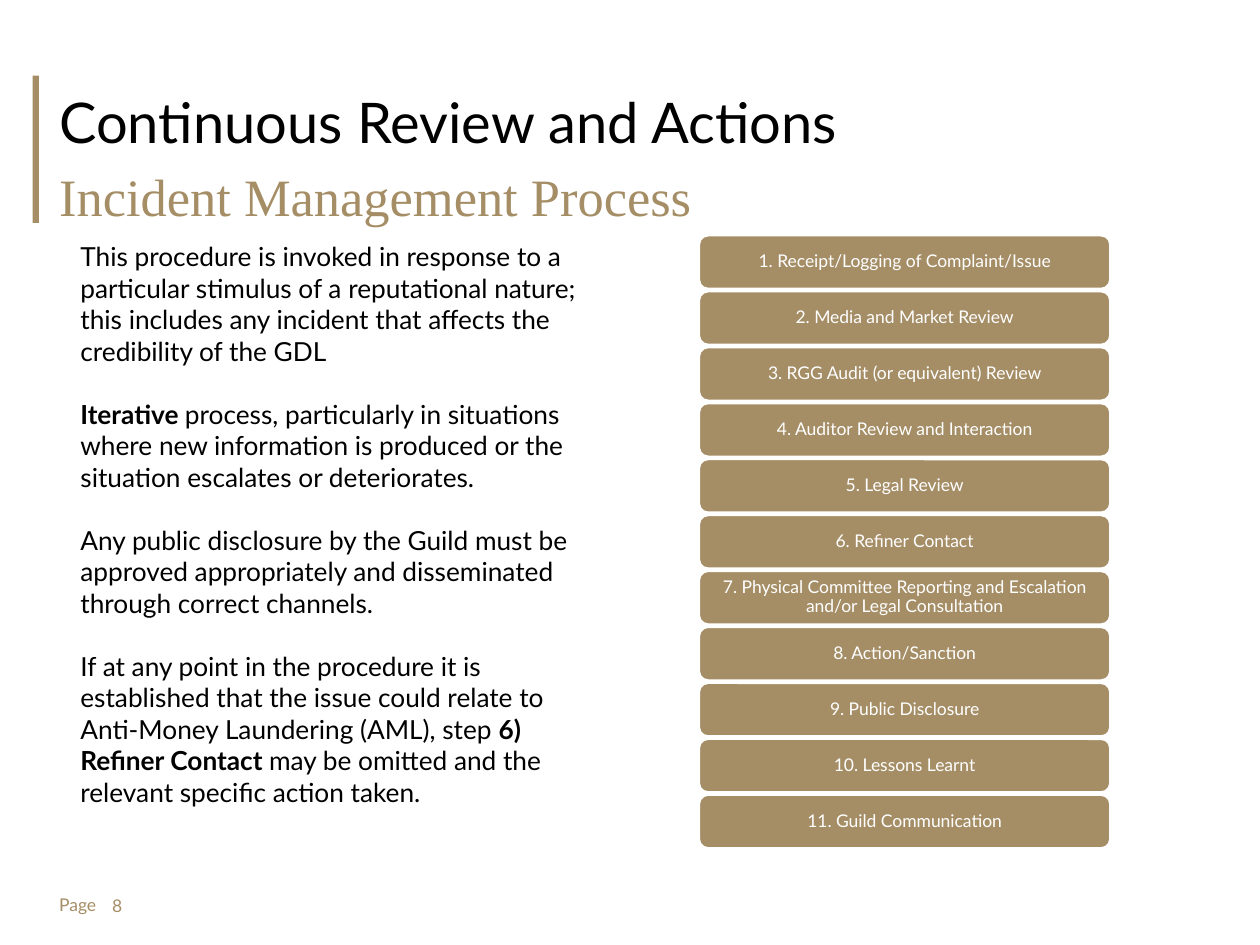
from typing import NamedTuple

from pptx import Presentation
from pptx.dml.color import RGBColor
from pptx.enum.shapes import MSO_SHAPE
from pptx.enum.text import MSO_ANCHOR, MSO_AUTO_SIZE, PP_ALIGN
from pptx.util import Inches, Pt

GOLD = RGBColor(0xA5, 0x8E, 0x66)
WHITE = RGBColor(0xFF, 0xFF, 0xFF)
BLACK = RGBColor(0, 0, 0)
RECT, ROUND = MSO_SHAPE.RECTANGLE, MSO_SHAPE.ROUNDED_RECTANGLE
TOP, MIDDLE = MSO_ANCHOR.TOP, MSO_ANCHOR.MIDDLE
LEFT, CENTER = PP_ALIGN.LEFT, PP_ALIGN.CENTER
FIXED = MSO_AUTO_SIZE.NONE


class Box(NamedTuple):
    left: float
    top: float
    width: float
    height: float

    def lengths(self):
        return [Inches(side) for side in self]


class Run(NamedTuple):
    text: str
    bold: bool = False


STEPS = [
    "Receipt/Logging of Complaint/Issue",
    "Media and Market Review",
    "RGG Audit (or equivalent) Review",
    "Auditor Review and Interaction",
    "Legal Review",
    "Refiner Contact",
    "Physical Committee Reporting and Escalation and/or Legal Consultation",
    "Action/Sanction",
    "Public Disclosure",
    "Lessons Learnt",
    "Guild Communication",
]
FIRST = Box(5.55, 1.87, 3.26, 0.42)
PITCH = 0.444

NOTES = [
    [Run("This procedure is invoked in response to a particular stimulus of a "
         "reputational nature; this includes any incident that affects the "
         "credibility of the GDL")],
    [Run("Iterative ", True),
     Run("process, particularly in situations where new information is "
         "produced or the situation escalates or deteriorates.")],
    [Run("Any public disclosure by the Guild must be approved appropriately "
         "and disseminated through correct channels.")],
    [Run("If at any point in the procedure it is established that the issue "
         "could relate to Anti-Money Laundering (AML), step "),
     Run("6) Refiner Contact ", True),
     Run("may be omitted and the relevant specific action taken.")],
]


def write(shape, paras: list[list[Run]], *, size: float, color: RGBColor,
          font: str = "Lato", align=LEFT, anchor=MIDDLE, inset=(0, 0.05),
          line: float = 1.0, gap: float = 0) -> None:
    """Fill a shape with paragraphs; gap is the space in points between them."""
    frame = shape.text_frame
    frame.word_wrap = True
    frame.auto_size = FIXED
    frame.vertical_anchor = anchor
    frame.margin_left = frame.margin_right = Inches(inset[0])
    frame.margin_top = frame.margin_bottom = Inches(inset[1])
    for index, runs in enumerate(paras):
        para = frame.add_paragraph() if index else frame.paragraphs[0]
        para.alignment = align
        para.line_spacing = line
        para.space_before = Pt(gap if index else 0)
        for part in runs:
            run = para.add_run()
            run.text = part.text
            run.font.name = font
            run.font.size = Pt(size)
            run.font.bold = part.bold
            run.font.color.rgb = color


def add_label(slide, box: Box, paras: list[list[Run]], **style) -> None:
    write(slide.shapes.add_textbox(*box.lengths()), paras, **style)


def add_block(slide, kind, box: Box):
    """Add a gold shape without outline or shadow."""
    shape = slide.shapes.add_shape(kind, *box.lengths())
    shape.shadow.inherit = False
    shape.fill.solid()
    shape.fill.fore_color.rgb = GOLD
    shape.line.fill.background()
    return shape


def add_step(slide, index: int, name: str) -> None:
    box = FIRST._replace(top=FIRST.top + index * PITCH)
    shape = add_block(slide, ROUND, box)
    shape.line.color.rgb = WHITE
    shape.line.width = Pt(1)
    write(shape, [[Run(f"{index + 1}. {name}")]], size=10, color=WHITE,
          align=CENTER, inset=(0.04, 0.02), line=0.9)


def main() -> None:
    deck = Presentation()
    deck.slide_width, deck.slide_height = Inches(10), Inches(7.5)
    slide = deck.slides.add_slide(deck.slide_layouts[5])

    title = slide.shapes.title
    title.left, title.top, title.width, title.height = Box(
        0.47, 0.64, 9.06, 0.71).lengths()
    write(title, [[Run("Continuous Review and Actions")]], size=32,
          color=BLACK, line=0.9)
    add_label(slide, Box(0.47, 1.39, 9.06, 0.33),
              [[Run("Incident Management Process")]],
              size=30, color=GOLD, font="Times New Roman")
    add_block(slide, RECT, Box(0.26, 0.6, 0.05, 1.17))

    add_label(slide, Box(0.54, 1.86, 4.23, 5.4), NOTES, size=15, color=BLACK,
              anchor=TOP, inset=(0.1, 0.05), gap=18)
    for index, name in enumerate(STEPS):
        add_step(slide, index, name)

    add_label(slide, Box(0.47, 7.05, 0.45, 0.27), [[Run("Page")]], size=10,
              color=GOLD, anchor=TOP)
    add_label(slide, Box(0.89, 7.05, 0.28, 0.28), [[Run("8")]], size=10,
              color=GOLD)
    deck.save("out.pptx")


if __name__ == "__main__":
    main()
